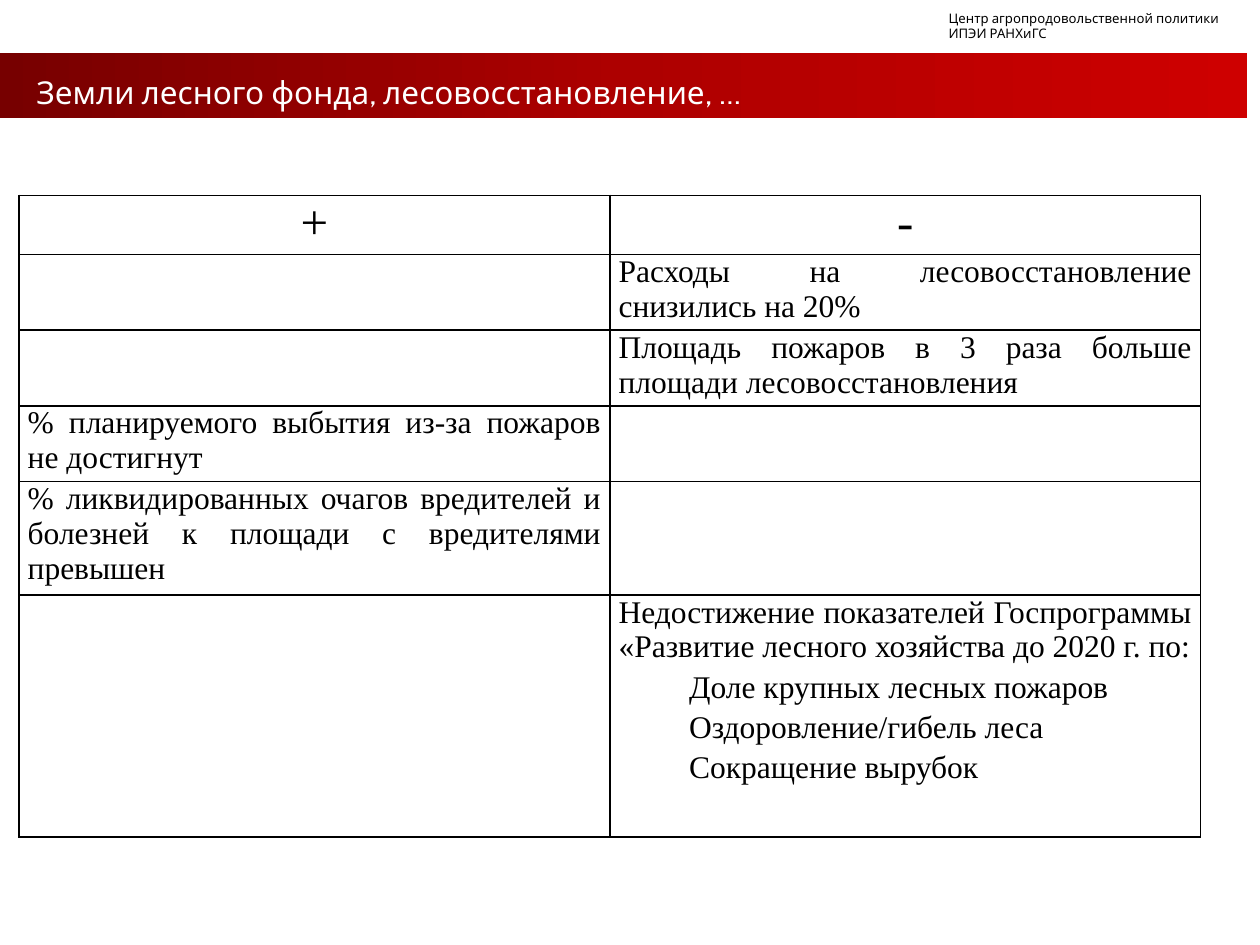
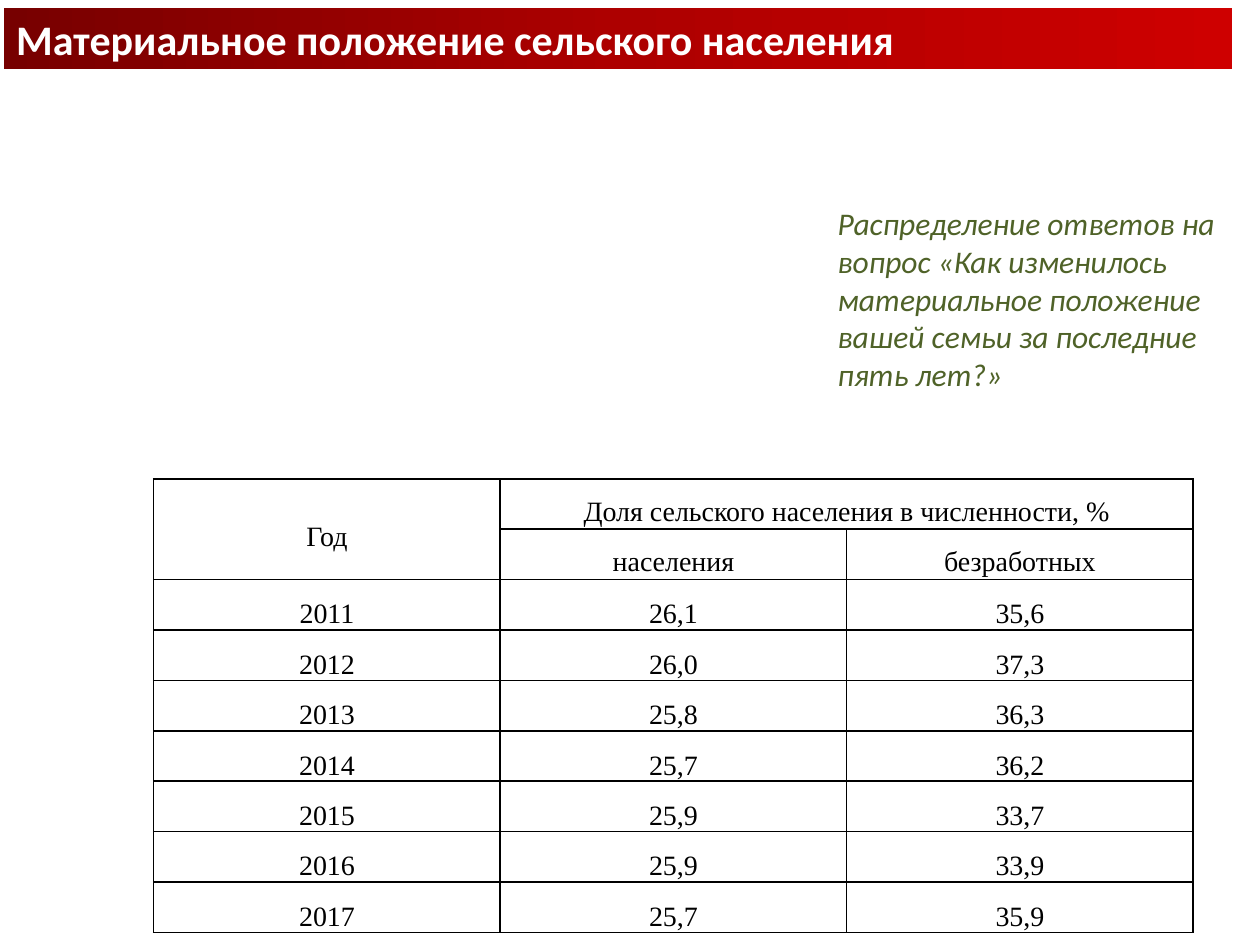
import pptx
import pptx.util
import pptx.dml.color
import pptx.enum.shapes
import pptx.enum.text
import pptx.oxml
import pptx.oxml.ns

Inches = pptx.util.Inches
Pt = pptx.util.Pt
Align = pptx.enum.text.PP_ALIGN
Anchor = pptx.enum.text.MSO_ANCHOR
NS = pptx.oxml.ns.nsdecls("a")
BLACK, WHITE, GREEN = "000000", "FFFFFF", "4F6228"
REDS = ((0, "770000"), (50, "AD0000"), (100, "CE0000"))
SERIF, SANS, HEAD = "Times New Roman", "Calibri", "Cabin"


def color(code):
    """Turn a hex string into a colour."""
    return pptx.dml.color.RGBColor.from_string(code)


class Deck:
    """Hold the shared style and the current slide."""

    def __init__(self):
        """Start a 10 by 7.5 inch deck."""
        self.prs = pptx.Presentation()
        self.prs.slide_width = Inches(10)
        self.prs.slide_height = Inches(7.5)

    def page(self):
        """Add a blank slide and make it current."""
        self.slide = self.prs.slides.add_slide(self.prs.slide_layouts[6])

    def text(self, para, words, size, font, tint, bold=False, slant=False):
        """Add one styled run to a paragraph."""
        run = para.add_run()
        run.text = words
        run.font.size = Pt(size)
        run.font.name = font
        run.font.color.rgb = color(tint)
        run.font.bold = bold
        run.font.italic = slant

    def band(self, left, top, width, height):
        """Draw a red gradient band and return it."""
        kind = pptx.enum.shapes.MSO_SHAPE.RECTANGLE
        band = self.slide.shapes.add_shape(
            kind, Inches(left), Inches(top), Inches(width), Inches(height))
        band.shadow.inherit = False
        band.line.fill.background()
        stops = "".join(
            f'<a:gs pos="{pos * 1000}"><a:srgbClr val="{code}"/></a:gs>'
            for pos, code in REDS)
        fill = pptx.oxml.parse_xml(
            f'<a:gradFill {NS} rotWithShape="1"><a:gsLst>{stops}</a:gsLst>'
            '<a:lin ang="0" scaled="0"/></a:gradFill>')
        band.fill.background()
        props = band.element.spPr
        props.replace(props.find(pptx.oxml.ns.qn("a:noFill")), fill)
        return band

    def label(self, left, top, width, height, words, *style, **look):
        """Add a wrapped text box."""
        box = self.slide.shapes.add_textbox(
            Inches(left), Inches(top), Inches(width), Inches(height))
        frame = box.text_frame
        frame.word_wrap = True
        frame.auto_size = pptx.enum.text.MSO_AUTO_SIZE.SHAPE_TO_FIT_TEXT
        self.text(frame.paragraphs[0], words, *style, **look)

    def grid(self, left, top, wide, cols, highs):
        """Add a plain table with black rules and return it."""
        shape = self.slide.shapes.add_table(
            len(highs), cols, Inches(left), Inches(top),
            Inches(wide * cols), Inches(sum(highs)))
        table = shape.table
        table.first_row = table.horz_banding = False
        for col in table.columns:
            col.width = Inches(wide)
        for row, high in zip(table.rows, highs):
            row.height = Inches(high)
        for cell in table.iter_cells():
            self.rule(cell)
        return table

    def rule(self, cell):
        """Outline a cell and clear its fill."""
        props = cell._tc.get_or_add_tcPr()
        for side in "LRTB":
            props.append(pptx.oxml.parse_xml(
                f'<a:ln{side} {NS} w="{Pt(1)}"><a:solidFill>'
                f'<a:srgbClr val="{BLACK}"/></a:solidFill></a:ln{side}>'))
        cell.fill.background()

    def fill(self, cell, lines, size, align, anchor=Anchor.TOP,
             pad=0, before=0, space=1.0, indent=0):
        """Put lines into a cell, indenting those after the first."""
        cell.margin_left = cell.margin_right = Inches(pad)
        cell.margin_top = cell.margin_bottom = 0
        cell.vertical_anchor = anchor
        frame = cell.text_frame
        for num, line in enumerate(lines):
            para = frame.add_paragraph() if num else frame.paragraphs[0]
            para.alignment = align
            para.space_before = Pt(before)
            para.line_spacing = space
            if num:
                para._p.get_or_add_pPr().set("marL", str(Inches(indent)))
            self.text(para, line, size, SERIF, BLACK)


def forest(deck):
    """Build the forest fund slide."""
    deck.page()
    deck.band(0, 0.42, 9.9, 0.52)
    deck.label(0.19, 0.53, 8.35, 0.4,
               "Земли лесного фонда, лесовосстановление, …", 18, HEAD, WHITE)
    deck.label(7.43, 0.03, 2.57, 0.35,
               "Центр агропродовольственной политики ИПЭИ РАНХиГС",
               7.5, HEAD, BLACK)
    goals = ("Недостижение показателей Госпрограммы «Развитие лесного "
             "хозяйства до 2020 г. по:", "Доле крупных лесных пожаров",
             "Оздоровление/гибель леса", "Сокращение вырубок")
    rows = (
        (("+",), ("-",)),
        ((), ("Расходы на лесовосстановление снизились на 20%",)),
        ((), ("Площадь пожаров в 3 раза больше площади лесовосстановления",)),
        (("% планируемого выбытия из-за пожаров не достигнут",), ()),
        (("% ликвидированных очагов вредителей и болезней к площади "
          "с вредителями превышен",), ()),
        ((), goals),
    )
    table = deck.grid(0.15, 1.55, 4.69, 2, (0.47, 0.6, 0.6, 0.6, 0.9, 1.92))
    for r, row in enumerate(rows):
        size, align = (18, Align.JUSTIFY) if r else (28, Align.CENTER)
        for c, lines in enumerate(row):
            deck.fill(table.cell(r, c), lines, size, align,
                      pad=0.07, before=3, indent=0.56)


def income(deck):
    """Build the rural income slide."""
    deck.page()
    deck.label(6.55, 1.57, 3.23, 1.62,
               "Распределение ответов на вопрос «Как изменилось материальное "
               "положение вашей семьи за последние пять лет?»",
               18, SANS, GREEN, slant=True)
    frame = deck.band(0.03, 0.06, 9.75, 0.49).text_frame
    frame.word_wrap = True
    frame.vertical_anchor = Anchor.MIDDLE
    para = frame.paragraphs[0]
    para.alignment = Align.LEFT
    deck.text(para, "Материальное положение сельского населения",
              24, SANS, WHITE, bold=True)
    rows = (
        ("Год", "Доля сельского населения в численности, %", ""),
        ("", "населения", "безработных"),
        ("2011", "26,1", "35,6"),
        ("2012", "26,0", "37,3"),
        ("2013", "25,8", "36,3"),
        ("2014", "25,7", "36,2"),
        ("2015", "25,9", "33,7"),
        ("2016", "25,9", "33,9"),
        ("2017", "25,7", "35,9"),
    )
    table = deck.grid(1.22, 3.8, 2.75, 3, [0.4] * len(rows))
    table.cell(0, 0).merge(table.cell(1, 0))
    table.cell(0, 1).merge(table.cell(0, 2))
    for r, row in enumerate(rows):
        anchor = Anchor.BOTTOM if r > 1 else Anchor.MIDDLE
        for c, words in enumerate(row):
            if words:
                deck.fill(table.cell(r, c), (words,), 16, Align.CENTER,
                          anchor, space=1.5)


def main():
    """Build and save the deck."""
    deck = Deck()
    forest(deck)
    income(deck)
    deck.prs.save("out.pptx")


if __name__ == "__main__":
    main()
